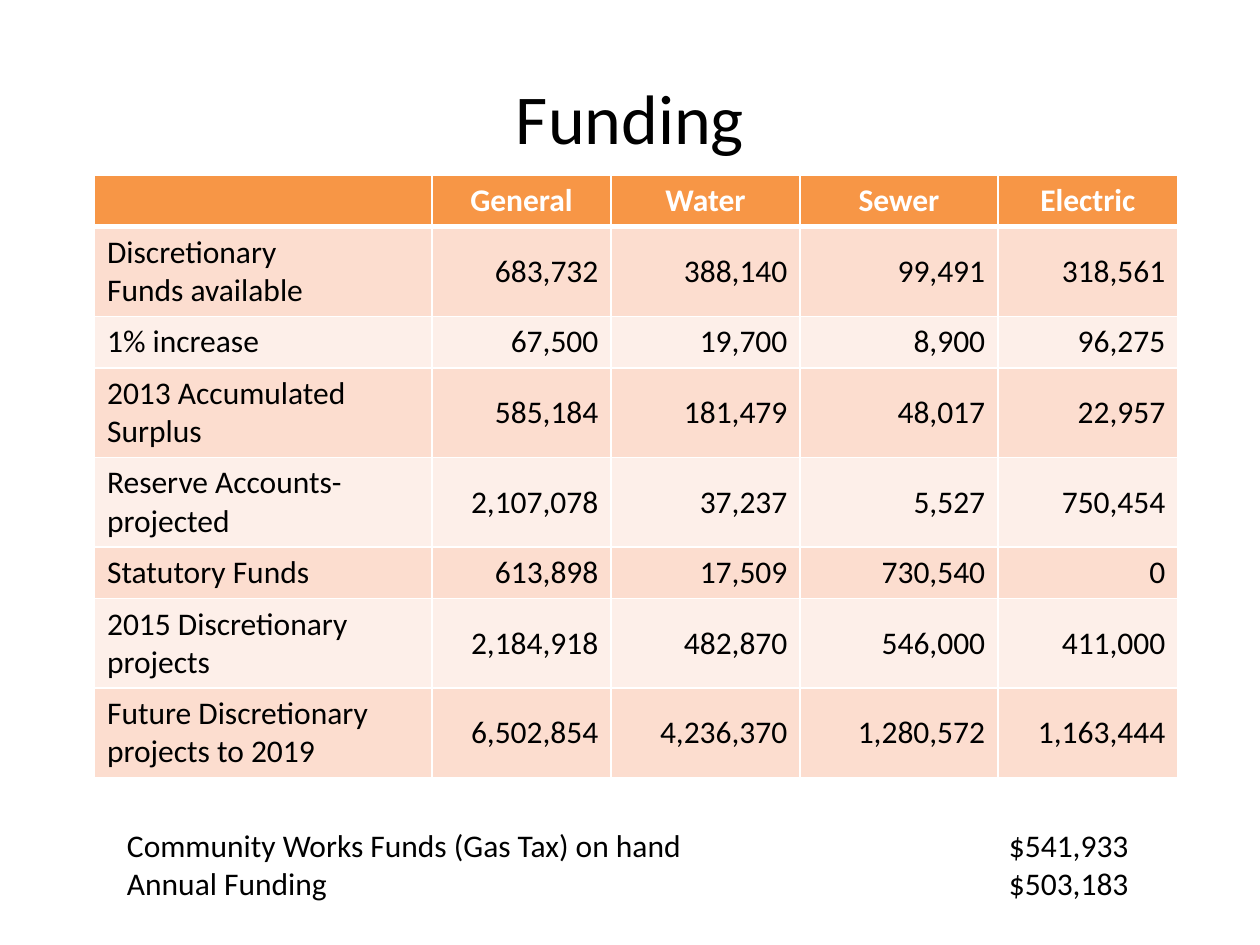
from typing import NamedTuple

from lxml import etree
from pptx import Presentation
from pptx.dml.color import RGBColor
from pptx.enum import text
from pptx.oxml import ns
from pptx.util import Inches, Pt

WIDTH, HEIGHT = 10, 7.5
FONT = "Calibri"
BLACK, WHITE = "000000", "FFFFFF"
HEADER_FILL = "F79646"
BAND_FILLS = ("FCDDCF", "FDEFE9")
COLUMN_WIDTHS = (2.68, 1.42, 1.5, 1.57, 1.43)
LINE_HEIGHT, ROW_PADDING = 0.3, 0.11
ALIGN, ANCHOR = text.PP_ALIGN, text.MSO_ANCHOR


class FundingRow(NamedTuple):
    label: str
    amounts: tuple[str, ...]
    lines: int = 2


HEADINGS = ("", "General", "Water", "Sewer", "Electric")
ROWS = (
    FundingRow("Discretionary\nFunds available", ("683,732", "388,140", "99,491", "318,561")),
    FundingRow("1% increase", ("67,500", "19,700", "8,900", "96,275"), lines=1),
    FundingRow("2013 Accumulated Surplus", ("585,184", "181,479", "48,017", "22,957")),
    FundingRow("Reserve Accounts-projected", ("2,107,078", "37,237", "5,527", "750,454")),
    FundingRow("Statutory Funds", ("613,898", "17,509", "730,540", "0"), lines=1),
    FundingRow("2015 Discretionary projects", ("2,184,918", "482,870", "546,000", "411,000")),
    FundingRow("Future Discretionary projects to 2019",
               ("6,502,854", "4,236,370", "1,280,572", "1,163,444")),
)
GAS_TAX = (
    "Community Works Funds (Gas Tax) on hand\t$541,933\n"
    "Annual Funding\t$503,183"
)


def rgb(color: str) -> RGBColor:
    return RGBColor.from_string(color)


def write(tf, content: str, *, size=18, color=BLACK, bold=False,
          align=ALIGN.LEFT, anchor=ANCHOR.TOP) -> None:
    """Fill a text frame, one paragraph for each line of content."""
    tf.word_wrap = True
    tf.vertical_anchor = anchor
    for i, line in enumerate(content.split("\n")):
        p = tf.paragraphs[0] if i == 0 else tf.add_paragraph()
        p.alignment = align
        p.font.size = Pt(size)
        r = p.add_run()
        r.text = line
        r.font.name, r.font.size, r.font.bold = FONT, Pt(size), bold
        r.font.color.rgb = rgb(color)


def set_borders(cell, color: str, bottom: float) -> None:
    """Draw 1 pt borders with a bottom border of its own width."""
    tc_pr = cell._tc.get_or_add_tcPr()
    widths = {"lnL": 1, "lnR": 1, "lnT": 1, "lnB": bottom}
    for i, (side, width) in enumerate(widths.items()):
        ln = etree.Element(ns.qn(f"a:{side}"), w=str(Pt(width)))
        fill = etree.SubElement(ln, ns.qn("a:solidFill"))
        etree.SubElement(fill, ns.qn("a:srgbClr"), val=color)
        tc_pr.insert(i, ln)


def fill_cell(cell, content: str, fill: str, *, bottom=1, anchor=ANCHOR.TOP, **fmt) -> None:
    cell.fill.solid()
    cell.fill.fore_color.rgb = rgb(fill)
    cell.vertical_anchor = anchor
    write(cell.text_frame, content, **fmt)
    set_borders(cell, WHITE, bottom)


def add_funding_table(slide, left: float, top: float) -> None:
    line_counts = [1] + [row.lines for row in ROWS]
    heights = [n * LINE_HEIGHT + ROW_PADDING for n in line_counts]
    table = slide.shapes.add_table(
        len(heights), len(COLUMN_WIDTHS), Inches(left), Inches(top),
        Inches(sum(COLUMN_WIDTHS)), Inches(sum(heights))).table
    for column, width in zip(table.columns, COLUMN_WIDTHS):
        column.width = Inches(width)
    for row, height in zip(table.rows, heights):
        row.height = Inches(height)

    for c, heading in enumerate(HEADINGS):
        fill_cell(table.cell(0, c), heading, HEADER_FILL, bottom=3,
                  color=WHITE, bold=True, align=ALIGN.CENTER)
    for r, row in enumerate(ROWS, start=1):
        fill = BAND_FILLS[(r - 1) % 2]
        bottom_cells = enumerate(row.amounts, start=1)
        fill_cell(table.cell(r, 0), row.label, fill)
        for c, amount in bottom_cells:
            fill_cell(table.cell(r, c), amount, fill,
                      anchor=ANCHOR.MIDDLE, align=ALIGN.RIGHT)


def add_tab_stop(p, position: float) -> None:
    tabs = etree.SubElement(p._p.get_or_add_pPr(), ns.qn("a:tabLst"))
    etree.SubElement(tabs, ns.qn("a:tab"), pos=str(Inches(position)), algn="l")
    p._p.pPr.insert(0, tabs)


def add_gas_tax_note(slide, left: float, top: float, width: float, height: float) -> None:
    box = slide.shapes.add_textbox(*map(Inches, (left, top, width, height)))
    tf = box.text_frame
    write(tf, GAS_TAX, align=ALIGN.JUSTIFY)
    tf.auto_size = text.MSO_AUTO_SIZE.SHAPE_TO_FIT_TEXT
    for p in tf.paragraphs:
        add_tab_stop(p, 0.7 * WIDTH)


def main() -> None:
    prs = Presentation()
    prs.slide_width, prs.slide_height = Inches(WIDTH), Inches(HEIGHT)
    slide = prs.slides.add_slide(prs.slide_layouts[5])

    title = slide.shapes.title
    title.left, title.top = Inches(0.05 * WIDTH), Inches(0.04 * HEIGHT)
    title.width, title.height = Inches(0.9 * WIDTH), Inches(HEIGHT / 6)
    write(title.text_frame, "Funding", size=40, align=ALIGN.CENTER, anchor=ANCHOR.MIDDLE)

    add_funding_table(slide, 0.75, 1.39)
    add_gas_tax_note(slide, 0.91, 6.51, 0.85 * WIDTH, 0.71)
    prs.save("out.pptx")


if __name__ == "__main__":
    main()
